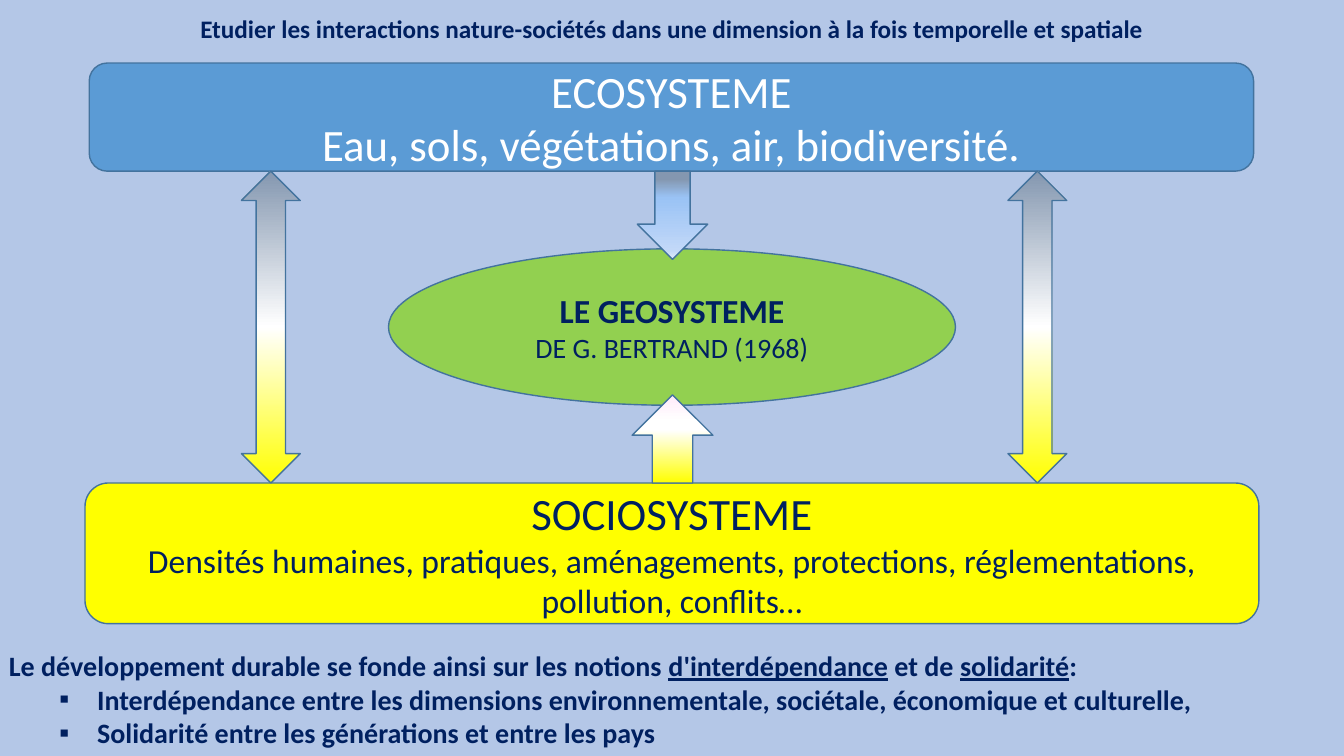
import pptx
import pptx.dml.color
import pptx.enum.shapes
import pptx.enum.text
import pptx.oxml
import pptx.oxml.ns
import pptx.util

PX = 9525
NAVY, WHITE, YELLOW, SLATE = "002060", "FFFFFF", "FFFF00", "8497B0"
OUTLINE = "43739E"
SHAPE = pptx.enum.shapes.MSO_SHAPE
ALIGN = pptx.enum.text.PP_ALIGN
EXCHANGE_STOPS = [(0, YELLOW), (50, WHITE), (100, SLATE)]


def px(*lengths):
    return [pptx.util.Emu(length * PX) for length in lengths]


def color(hex_value):
    return pptx.dml.color.RGBColor.from_string(hex_value)


def add_outlined(slide, kind, box):
    shape = slide.shapes.add_shape(kind, *px(*box))
    shape.shadow.inherit = False
    shape.line.color.rgb = color(OUTLINE)
    shape.line.width = pptx.util.Pt(1)
    return shape


def add_paragraph(frame, runs, size, ink=NAVY, bold=False, align=ALIGN.CENTER):
    """Fill the first empty paragraph or add one; runs are (text, underlined) pairs."""
    first = frame.paragraphs[0]
    paragraph = frame.add_paragraph() if first.runs else first
    paragraph.alignment = align
    for text, underlined in runs:
        run = paragraph.add_run()
        run.text = text
        run.font.name = "Calibri"
        run.font.size = pptx.util.Pt(size)
        run.font.bold = bold
        run.font.underline = underlined
        run.font.color.rgb = color(ink)
    return paragraph


def add_system(slide, kind, box, fill, ink, lines):
    """Draw a filled shape with centred lines given as (text, size, bold)."""
    system = add_outlined(slide, kind, box)
    system.fill.solid()
    system.fill.fore_color.rgb = color(fill)
    frame = system.text_frame
    frame.word_wrap = True
    frame.vertical_anchor = pptx.enum.text.MSO_ANCHOR.MIDDLE
    for text, size, bold in lines:
        add_paragraph(frame, [(text, False)], size, ink, bold)


def add_gradient_arrow(slide, kind, box, stops, angle):
    """Draw an arrow shaded by (percent, colour) stops; angle is clockwise degrees."""
    arrow = add_outlined(slide, kind, box)
    arrow.fill.gradient()
    arrow.fill.gradient_angle = 360 - angle
    stop_list = arrow.element.spPr.find(".//" + pptx.oxml.ns.qn("a:gsLst"))
    for stop in list(stop_list):
        stop_list.remove(stop)
    for percent, hex_value in stops:
        stop_list.append(pptx.oxml.parse_xml(
            f'<a:gs {pptx.oxml.ns.nsdecls("a")} pos="{percent * 1000}">'
            f'<a:srgbClr val="{hex_value}"/></a:gs>'))


def add_text_frame(slide, box):
    frame = slide.shapes.add_textbox(*px(*box)).text_frame
    frame.word_wrap = True
    return frame


def add_bullet(paragraph):
    properties = paragraph._p.get_or_add_pPr()
    left, hanging = px(84, -36)
    properties.set("marL", str(left))
    properties.set("indent", str(hanging))
    declaration = pptx.oxml.ns.nsdecls("a")
    properties.append(pptx.oxml.parse_xml(f'<a:buFont {declaration} typeface="Calibri"/>'))
    properties.append(pptx.oxml.parse_xml(f'<a:buChar {declaration} char="▪"/>'))


def add_conclusion(slide):
    frame = add_text_frame(slide, (-1, 613, 1280, 107))
    introduction = [
        ("Le développement durable se fonde ainsi sur les notions ", False),
        ("d'interdépendance", True),
        (" et de ", False),
        ("solidarité", True),
        (":", False),
    ]
    add_paragraph(frame, introduction, 20, bold=True, align=ALIGN.JUSTIFY)
    for notion in (
        "Interdépendance entre les dimensions environnementale, sociétale, économique et culturelle,",
        "Solidarité entre les générations et entre les pays",
    ):
        add_bullet(add_paragraph(frame, [(notion, False)], 20, bold=True, align=ALIGN.JUSTIFY))


def main():
    presentation = pptx.Presentation()
    presentation.slide_width, presentation.slide_height = px(1280, 720)
    slide = presentation.slides.add_slide(presentation.slide_layouts[6])
    slide.background.fill.solid()
    slide.background.fill.fore_color.rgb = color("B4C7E7")

    add_system(slide, SHAPE.OVAL, (370, 237, 540, 149), "92D050", NAVY, [
        ("LE GEOSYSTEME", 24, True),
        ("DE G. BERTRAND (1968)", 20, False),
    ])
    add_system(slide, SHAPE.ROUNDED_RECTANGLE, (85, 60, 1109, 103), "5B9BD5", WHITE, [
        ("ECOSYSTEME", 32, False),
        ("Eau, sols, végétations, air, biodiversité.", 32, False),
    ])
    add_system(slide, SHAPE.ROUNDED_RECTANGLE, (81, 460, 1118, 134), YELLOW, NAVY, [
        ("SOCIOSYSTEME", 32, False),
        ("Densités humaines, pratiques, aménagements, protections, "
         "réglementations, pollution, conflits…", 24, False),
    ])

    for left in (230, 960):
        add_gradient_arrow(slide, SHAPE.UP_DOWN_ARROW, (left, 163, 56, 297), EXCHANGE_STOPS, 270)
    add_gradient_arrow(slide, SHAPE.DOWN_ARROW, (607, 163, 67, 84),
                       [(9, SLATE), (30, "9AC3F5"), (90, "C2D8F8"), (100, "E1EBFB")], 90)
    add_gradient_arrow(slide, SHAPE.UP_ARROW, (602, 376, 77, 84),
                       [(0, YELLOW), (60, WHITE), (70, WHITE), (100, "FFEBFA")], 270)

    title = "Etudier les interactions nature-sociétés dans une dimension à la fois temporelle et spatiale"
    add_paragraph(add_text_frame(slide, (0, 8, 1280, 38)), [(title, False)], 18, bold=True)
    add_conclusion(slide)
    presentation.save("out.pptx")


if __name__ == "__main__":
    main()
